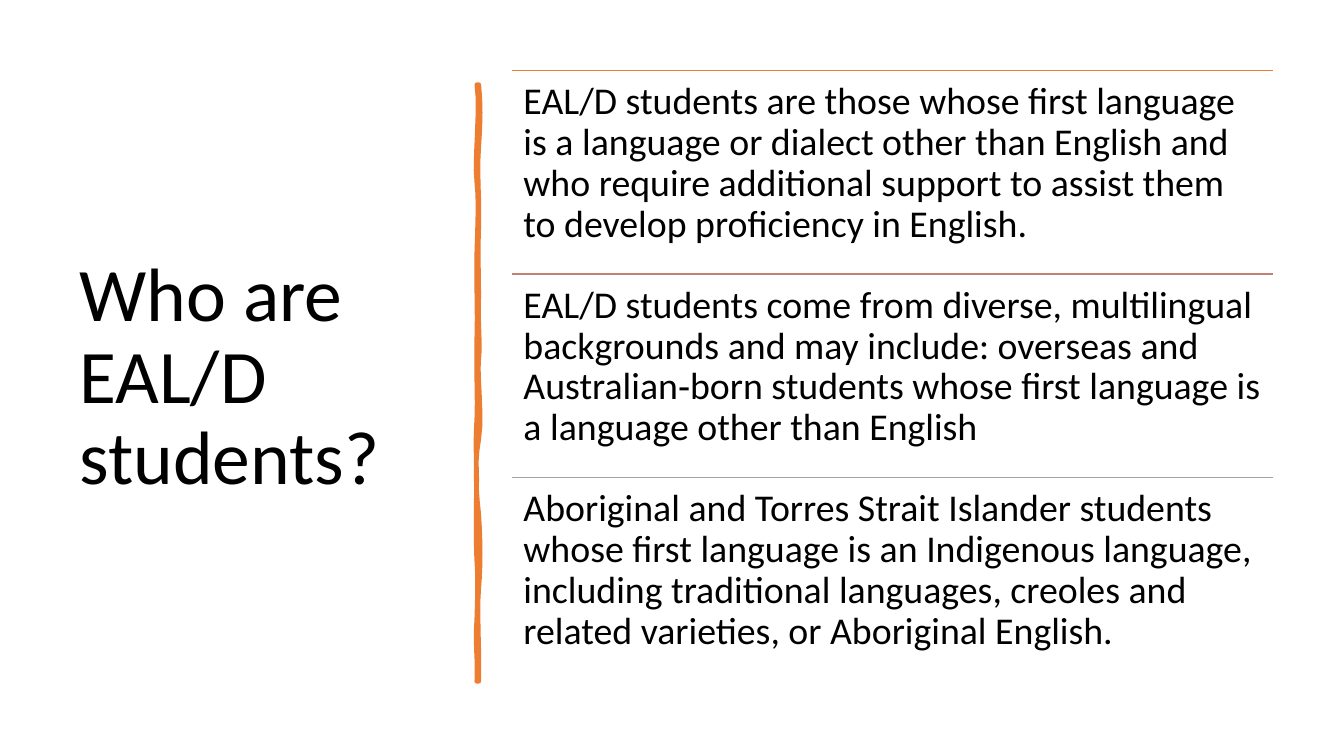
from pptx import Presentation
from pptx.dml.color import RGBColor
from pptx.enum.shapes import MSO_CONNECTOR
from pptx.enum.text import MSO_ANCHOR
from pptx.util import Pt
from lxml import etree

COLORS = {"text": "000000", "orange": "ED7D31", "rust": "C48170", "gray": "A5A5A5"}
DRAWING_NS = "http://schemas.openxmlformats.org/drawingml/2006/main"

ROWS = [
    ("orange", "EAL/D students are those whose first language is a language or dialect "
     "other than English and who require additional support to assist them to develop "
     "proficiency in English."),
    ("rust", "EAL/D students come from diverse, multilingual backgrounds and may include: "
     "overseas and Australian‐born students whose first language is a language other "
     "than English"),
    ("gray", "Aboriginal and Torres Strait Islander students whose first language is an "
     "Indigenous language, including traditional languages, creoles and related "
     "varieties, or Aboriginal English."),
]
ROW_LEFT, ROW_TOP, ROW_WIDTH, ROW_HEIGHT = 365.8, 50.4, 543.6, 145.44

BAR_TOP, BAR_BOTTOM, BAR_LEFT, BAR_RIGHT = 60.5, 486.7, 340.6, 342
RIGHT_WAVES = [
    (1.4, 73.4, 1.4, 85.7, 105.1), (-1.4, 124.6, 0.7, 140.4, 162.7),
    (-0.7, 185, 0, 188.6, 211.7), (-0.7, 234, 1.4, 246.2, 256.3),
    (-1.4, 266.4, 2.9, 298.1, 313.9), (-2.9, 329, -2.2, 348.5, 367.2),
    (1.4, 385.9, 1.4, 406.1, 420.5), (-1.4, 434.2, 0.7, 468, BAR_BOTTOM),
]
LEFT_WAVES = [
    (0.7, 465.1, -1.4, 463.7, 441.4), (0.7, 419.8, 0.7, 410.4, 401),
    (-0.7, 391.7, -0.7, 356.4, 343.4), (0, 330.5, -1.4, 320.4, 298.8),
    (0.7, 277.9, -0.7, 268.6, 241.2), (0.7, 214.6, -0.7, 202.3, 180),
    (0.7, 157, 1.4, 144, 130.3), (-2.2, 117.4, 2.9, 74.9, BAR_TOP),
]


def wavy_edge(x, y, waves, steps=6):
    """Return points along a chain of cubic curves that rest on a vertical edge."""
    points = [(x, y)]
    for dx1, y1, dx2, y2, end in waves:
        for i in range(1, steps + 1):
            t = i / steps
            u = 1 - t
            b1, b2 = 3 * u * u * t, 3 * u * t * t
            points.append((x + b1 * dx1 + b2 * dx2,
                           u ** 3 * y + b1 * y1 + b2 * y2 + t ** 3 * end))
        y = end
    return points


class SlideBuilder:
    """Holds the style and the current slide, and adds elements in points."""

    def __init__(self, slide, font="Calibri"):
        self.slide = slide
        self.font = font

    def color(self, name):
        return RGBColor.from_string(COLORS[name])

    def text(self, left, top, width, height, words, size, inset=(7.2, 3.6),
             anchor=MSO_ANCHOR.TOP):
        sp = self.slide.shapes.add_textbox(Pt(left), Pt(top), Pt(width), Pt(height))
        tf = sp.text_frame
        tf.word_wrap = True
        tf.vertical_anchor = anchor
        tf.margin_left = tf.margin_right = Pt(inset[0])
        tf.margin_top = tf.margin_bottom = Pt(inset[1])
        p = tf.paragraphs[0]
        p.line_spacing = 0.9
        r = p.add_run()
        r.text = words
        r.font.name = self.font
        r.font.size = Pt(size)
        r.font.color.rgb = self.color("text")

    def rule(self, left, top, width, color):
        line = self.slide.shapes.add_connector(
            MSO_CONNECTOR.STRAIGHT, Pt(left), Pt(top), Pt(left + width), Pt(top))
        line.line.color.rgb = self.color(color)
        line.line.width = Pt(1)
        etree.SubElement(line._element.spPr, f"{{{DRAWING_NS}}}effectLst")

    def outline(self, points, color, weight):
        pts = [(Pt(x), Pt(y)) for x, y in points]
        builder = self.slide.shapes.build_freeform(*pts[0])
        builder.add_line_segments(pts[1:], close=True)
        sp = builder.convert_to_shape()
        sp.shadow.inherit = False
        sp.fill.solid()
        sp.fill.fore_color.rgb = self.color(color)
        sp.line.color.rgb = self.color(color)
        sp.line.width = Pt(weight)


def main():
    prs = Presentation()
    prs.slide_width, prs.slide_height = Pt(960), Pt(540)
    s = SlideBuilder(prs.slides.add_slide(prs.slide_layouts[6]))

    s.text(49.7, 50.4, 269.3, 439.9, "Who are EAL/D students?", 54,
           anchor=MSO_ANCHOR.MIDDLE)
    s.outline(wavy_edge(BAR_RIGHT, BAR_TOP, RIGHT_WAVES)
              + wavy_edge(BAR_LEFT, BAR_BOTTOM, LEFT_WAVES), "orange", 3.25)

    for i, (color, words) in enumerate(ROWS):
        top = ROW_TOP + i * ROW_HEIGHT
        s.rule(ROW_LEFT, top, ROW_WIDTH, color)
        s.text(ROW_LEFT, top, ROW_WIDTH, ROW_HEIGHT, words, 27, inset=(8.1, 8.1))

    prs.save("out.pptx")


if __name__ == "__main__":
    main()
